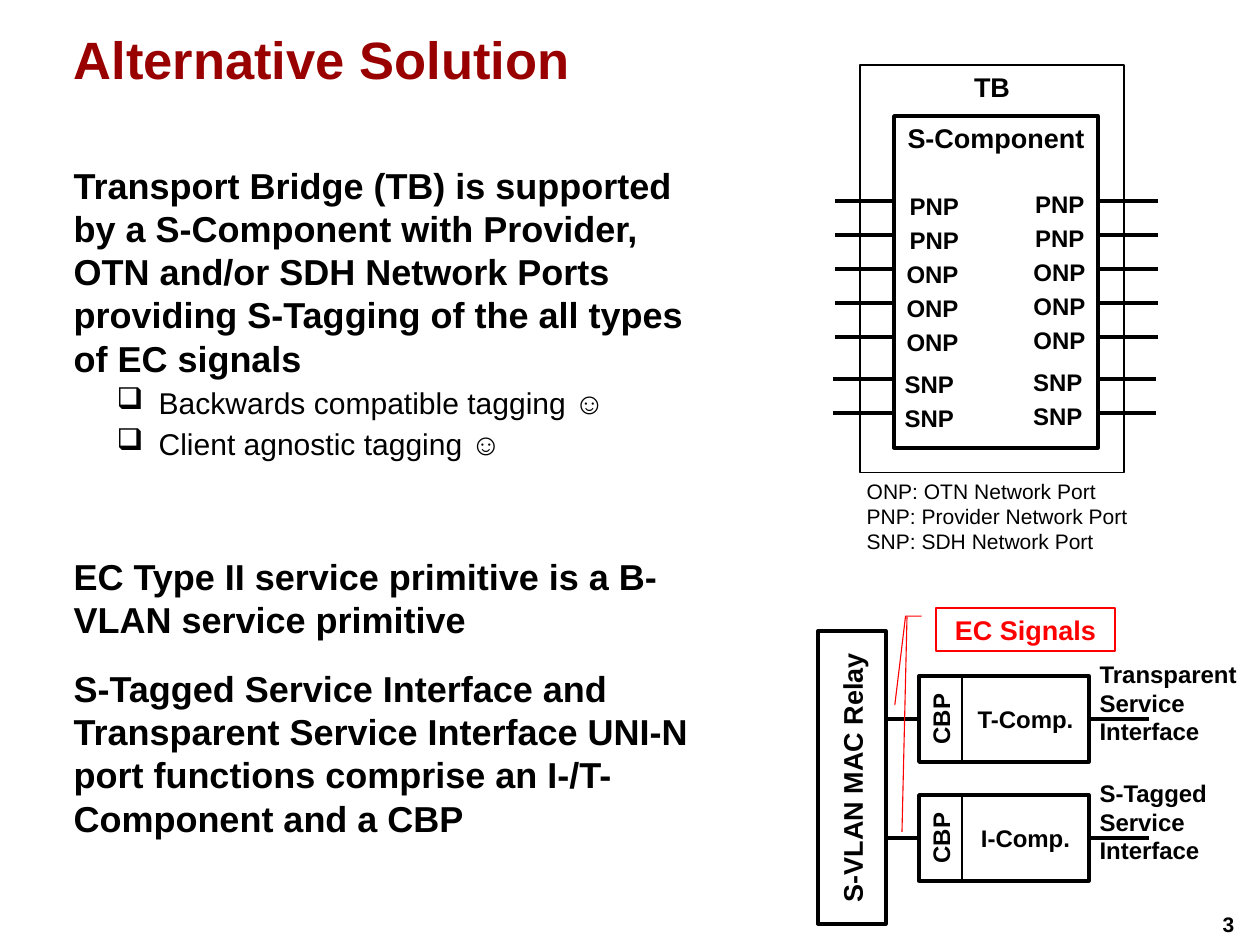
import pptx
import pptx.util
import pptx.dml.color
import pptx.enum.shapes
import pptx.enum.text
import pptx.oxml
import pptx.oxml.ns
from lxml import etree

Pt = pptx.util.Pt
RGBColor = pptx.dml.color.RGBColor
SHAPE = pptx.enum.shapes.MSO_SHAPE
LINE = pptx.enum.shapes.MSO_CONNECTOR.STRAIGHT
ALIGN = pptx.enum.text.PP_ALIGN
ANCHOR = pptx.enum.text.MSO_ANCHOR
qn = pptx.oxml.ns.qn

BLACK = RGBColor(0, 0, 0)
MAROON = RGBColor(0x99, 0, 0)
RED = RGBColor(0xFF, 0, 0)
SCALE = 914400 / 108
THICK, THIN = 2.25, 0.75

deck = pptx.Presentation()
deck.slide_width = round(1260 * SCALE)
deck.slide_height = round(945 * SCALE)
slide = deck.slides.add_slide(deck.slide_layouts[6])


def block(x, y, w, h, text="", size=16, bold=True, color=BLACK, align=ALIGN.LEFT,
          wrap=True, kind=None, line=THICK, anchor=ANCHOR.TOP, turn=False):
    """Add a text box, or an unfilled outlined shape when kind is given."""
    place = [round(v * SCALE) for v in (x, y, w, h)]
    if kind is None:
        item = slide.shapes.add_textbox(*place)
    else:
        item = slide.shapes.add_shape(kind, *place)
        item.shadow.inherit = False
        item.fill.background()
        item.line.color.rgb = color
        item.line.width = Pt(line)
        align = ALIGN.CENTER
    frame = item.text_frame
    frame.word_wrap = wrap
    frame.vertical_anchor = anchor
    frame.text = text
    if turn:
        frame._txBody.find(qn("a:bodyPr")).set("vert", "vert270")
    for para in frame.paragraphs:
        para.alignment = align
        para.font.name = "Arial"
        para.font.size = Pt(size)
        para.font.bold = bold
        para.font.color.rgb = color
    return item


def wire(x1, y1, x2, y2, color=BLACK, width=THICK):
    item = slide.shapes.add_connector(LINE, *[round(v * SCALE) for v in (x1, y1, x2, y2)])
    item.line.color.rgb = color
    item.line.width = Pt(width)
    etree.SubElement(item._element.spPr, qn("a:effectLst"))
    return item


# Title and page number
block(63, 22, 1134, 120, "Alternative Solution", 35, color=MAROON)
block(1212, 906, 47, 36, "3", 14, wrap=False)

# Body: text, space before in points, bulleted
points = [
    ("Transport Bridge (TB) is supported by a S-Component with Provider, OTN and/or SDH "
     "Network Ports providing S-Tagging of the all types of EC signals", 0, False),
    ("Backwards compatible tagging ☺", 7, True),
    ("Client agnostic tagging ☺", 7, True),
    ("EC Type II service primitive is a B-VLAN service primitive", 62, False),
    ("S-Tagged Service Interface and Transparent Service Interface UNI-N port functions "
     "comprise an I-/T-Component and a CBP", 17, False),
]
body = block(63, 158, 661, 670, "\n".join(p[0] for p in points), 24)
for para, (text, gap, dot) in zip(body.text_frame.paragraphs, points):
    para.space_before = Pt(gap)
    if dot:
        para.level = 1
        para.line_spacing = 0.85
        para.font.size = Pt(20)
        para.font.bold = False
        props = para._p.get_or_add_pPr()
        props.set("marL", str(round(85 * SCALE)))
        props.set("indent", str(round(-42 * SCALE)))
        mark = pptx.oxml.parse_xml(
            '<a:buChar xmlns:a="http://schemas.openxmlformats.org/drawingml/2006/main"'
            ' char="❑"/>')
        props.find(qn("a:defRPr")).addprevious(mark)

# Bridge and its component
block(860, 65, 264, 408, "TB", 18, kind=SHAPE.RECTANGLE, line=THIN)
block(894, 116, 204, 332, "S-Component", 18, kind=SHAPE.RECTANGLE)

# Ports: name, line height, label left and right edges, label width, line shift
ports = [("PNP", 201 + 34 * i, 899, 1095, 71, 0) for i in range(2)]
ports += [("ONP", 201 + 34 * i, 896, 1096, 75, 0) for i in range(2, 5)]
ports += [("SNP", 379 + 34 * i, 894, 1093, 71, -2) for i in range(2)]
for name, y, left, right, wide, shift in ports:
    block(left, y - 15, wide, 40, name, wrap=False)
    block(right - wide, y - 17, wide, 40, name, align=ALIGN.RIGHT, wrap=False)
    for x in (835, 1098):
        wire(x + shift, y, x + shift + 60, y)

# Legend
block(856, 473, 284, 87,
      "ONP: OTN Network Port\nPNP: Provider Network Port\nSNP: SDH Network Port",
      14, bold=False, wrap=False)

# Relay with its two service interfaces
block(818, 631, 68, 293, "S-VLAN MAC Relay", 18, kind=SHAPE.RECTANGLE,
      anchor=ANCHOR.MIDDLE, turn=True)
rows = [("T-Comp.", "Transparent Service Interface"),
        ("I-Comp.", "S-Tagged Service Interface")]
for i, (part, label) in enumerate(rows):
    top = 676 + 119 * i
    mid = top + 43
    unit = block(919, top, 170, 86, kind=SHAPE.RECTANGLE)
    wire(886, mid, 919, mid).end_connect(unit, 1)
    wire(1089, mid, 1149, mid).begin_connect(unit, 3)
    block(919, top, 43, 86, "CBP", kind=SHAPE.RECTANGLE, line=THIN,
          anchor=ANCHOR.MIDDLE, turn=True)
    block(962, top, 127, 86, part, kind=SHAPE.RECTANGLE, line=THIN, anchor=ANCHOR.MIDDLE)
    block(1089, top - 22, 162, 98, label)

# Callout for the signals
note = block(936, 608, 179, 43, "EC Signals", 18, color=RED,
             kind=SHAPE.LINE_CALLOUT_2, line=THIN)
for i, bend in enumerate((0.19, -0.08, 0.19, -0.17, 2.26, -0.23)):
    note.adjustments[i] = bend
wire(907, 617, 902, 832, RED, THIN)

deck.save("out.pptx")
